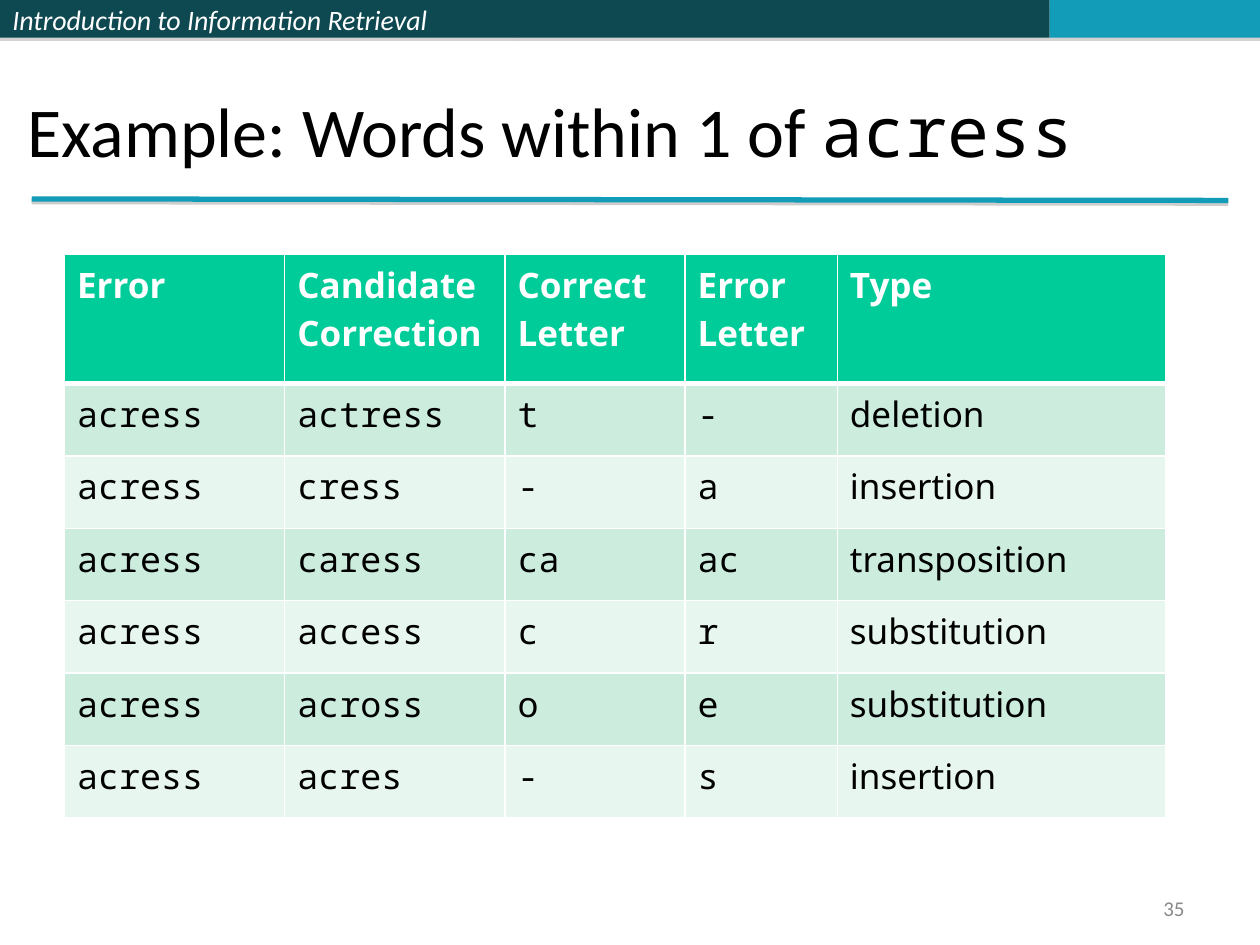
"""Build a slide with a table of words one edit away from a misspelling."""
from lxml import etree
from pptx import Presentation
from pptx.dml.color import RGBColor
from pptx.enum.shapes import MSO_CONNECTOR, MSO_SHAPE
from pptx.enum.text import MSO_ANCHOR, MSO_AUTO_SIZE, PP_ALIGN
from pptx.oxml import parse_xml
from pptx.oxml.ns import nsdecls, qn
from pptx.util import Cm, Pt

RECT, STRAIGHT = MSO_SHAPE.RECTANGLE, MSO_CONNECTOR.STRAIGHT
BOTTOM, MIDDLE = MSO_ANCHOR.BOTTOM, MSO_ANCHOR.MIDDLE
LEFT, RIGHT = PP_ALIGN.LEFT, PP_ALIGN.RIGHT
NO_FIT = MSO_AUTO_SIZE.NONE

COLORS = {
    "dark": "0E4851", "accent": "139CB7", "head": "00CC99",
    "odd": "CCECDE", "even": "E7F6EF", "white": "FFFFFF",
    "black": "000000", "gray": "898989", "shadow": "808080",
}
SANS, MONO = "Noto Sans", "Noto Sans Mono"
FORMATS = {
    "banner": {"name": "Calibri", "size": Pt(16), "italic": True, "color": "white"},
    "title": {"name": "Calibri", "size": Pt(40), "color": "black"},
    "title_code": {"name": MONO, "size": Pt(40), "color": "black"},
    "head": {"name": SANS, "size": Pt(20), "bold": True, "color": "white"},
    "word": {"name": SANS, "size": Pt(20), "bold": False, "color": "black"},
    "code": {"name": MONO, "size": Pt(20), "bold": False, "color": "black"},
    "number": {"name": "Calibri", "size": Pt(12), "color": "gray"},
}
HEADERS = ["Error", "Candidate Correction", "Correct Letter", "Error Letter", "Type"]
EDITS = [
    ("actress", "t", "-", "deletion"),
    ("cress", "-", "a", "insertion"),
    ("caress", "ca", "ac", "transposition"),
    ("access", "c", "r", "substitution"),
    ("across", "o", "e", "substitution"),
    ("acres", "-", "s", "insertion"),
]


def rgb(name):
    return RGBColor.from_string(COLORS[name])


class Deck:
    """Hold the slide and draw its elements in one style."""

    def __init__(self, slide):
        self.s = slide

    def add_text(self, p, text, style):
        r = p.add_run()
        r.text = text
        for key, value in FORMATS[style].items():
            if key == "color":
                r.font.color.rgb = rgb(value)
            else:
                setattr(r.font, key, value)

    def shadow(self, sp, alpha, dist):
        spPr = sp._element.spPr
        for old in spPr.findall(qn("a:effectLst")):
            spPr.remove(old)
        spPr.append(parse_xml(
            f'<a:effectLst {nsdecls("a")}><a:outerShdw dist="{Pt(dist)}" dir="5400000" '
            f'rotWithShape="0"><a:srgbClr val="{COLORS["shadow"]}">'
            f'<a:alpha val="{alpha * 1000}"/></a:srgbClr></a:outerShdw></a:effectLst>'))

    def bar(self, x, width, color, text=None):
        sp = self.s.shapes.add_shape(RECT, Cm(x), 0, Cm(width), Cm(0.76))
        sp.shadow.inherit = False
        sp.fill.solid()
        sp.fill.fore_color.rgb = rgb(color)
        sp.line.fill.background()
        self.shadow(sp, 35, 1.8)
        if text:
            sp.text_frame.vertical_anchor = MIDDLE
            p = sp.text_frame.paragraphs[0]
            p.alignment = LEFT
            self.add_text(p, text, "banner")

    def rule(self, x1, y1, x2, y2):
        line = self.s.shapes.add_connector(STRAIGHT, Cm(x1), Cm(y1), Cm(x2), Cm(y2))
        line.line.color.rgb = rgb("accent")
        line.line.width = Pt(3)
        self.shadow(line, 38, 1.6)

    def title(self, x, y, width, height, runs):
        sp = self.s.shapes.title
        sp.left, sp.top, sp.width, sp.height = Cm(x), Cm(y), Cm(width), Cm(height)
        tf = sp.text_frame
        tf.auto_size, tf.vertical_anchor = NO_FIT, BOTTOM
        p = tf.paragraphs[0]
        p.alignment = LEFT
        for text, style in runs:
            self.add_text(p, text, style)

    def number(self, x, y, width, height, text):
        tf = self.s.shapes.add_textbox(Cm(x), Cm(y), Cm(width), Cm(height)).text_frame
        tf.word_wrap, tf.vertical_anchor = True, MIDDLE
        p = tf.paragraphs[0]
        p.alignment = RIGHT
        self.add_text(p, text, "number")

    def borders(self, cell, top, bottom):
        tcPr = cell._tc.get_or_add_tcPr()
        for i, (side, width) in enumerate(zip("LRTB", (1, 1, top, bottom))):
            ln = etree.Element(qn(f"a:ln{side}"), w=str(Pt(width)))
            fill = etree.SubElement(ln, qn("a:solidFill"))
            etree.SubElement(fill, qn("a:srgbClr"), val=COLORS["white"])
            tcPr.insert(i, ln)

    def table(self, x, y, widths, heights, rows):
        frame = self.s.shapes.add_table(len(rows), len(widths), Cm(x), Cm(y),
                                        Cm(sum(widths)), Cm(sum(heights)))
        table = frame.table
        for column, width in zip(table.columns, widths):
            column.width = Cm(width)
        for row, height in zip(table.rows, heights):
            row.height = Cm(height)
        for i, row in enumerate(rows):
            band = "head" if i == 0 else "odd" if i % 2 else "even"
            for j, text in enumerate(row):
                cell = table.cell(i, j)
                cell.fill.solid()
                cell.fill.fore_color.rgb = rgb(band)
                self.borders(cell, 3 if i == 1 else 1, 3 if i == 0 else 1)
                body = "word" if j == len(row) - 1 else "code"
                self.add_text(cell.text_frame.paragraphs[0], text, "head" if i == 0 else body)


def main():
    prs = Presentation()
    prs.slide_width, prs.slide_height = Cm(25.4), Cm(19.05)
    deck = Deck(prs.slides.add_slide(prs.slide_layouts[5]))
    deck.bar(0, 10.36, "dark", "Introduction to Information Retrieval")
    deck.bar(10.36, 10.8, "dark")
    deck.bar(21.16, 4.24, "accent")
    deck.rule(0.64, 4.01, 24.76, 4.04)
    deck.title(0.3, 1.52, 25.1, 2.06,
               [("Example: Words within 1 of ", "title"), ("acress", "title_code")])
    rows = [HEADERS] + [("acress", *edit) for edit in EDITS]
    deck.table(1.3, 5.13, [4.44, 4.44, 3.63, 3.07, 6.63], [2.6] + [1.46] * len(EDITS), rows)
    deck.number(18.21, 17.93, 5.92, 0.76, "35")
    prs.save("out.pptx")


if __name__ == "__main__":
    main()
